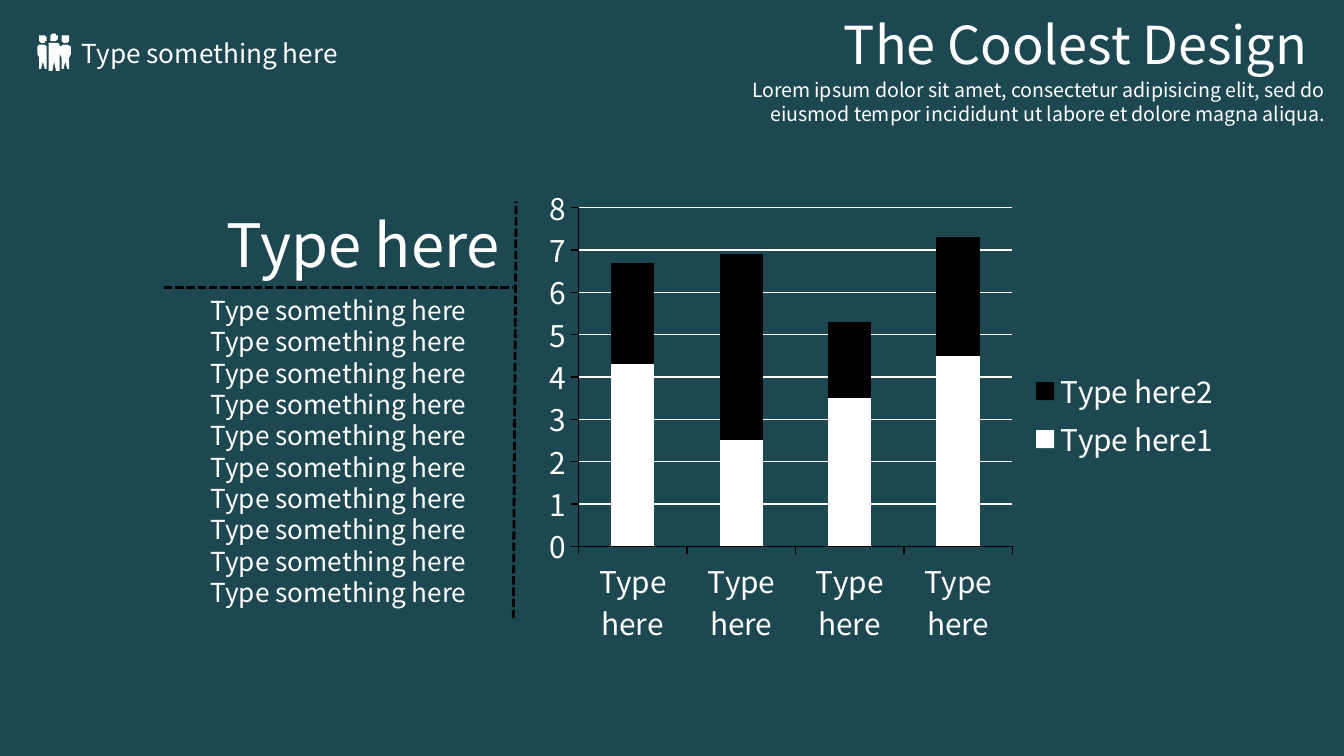
import math

from lxml import etree
from pptx import Presentation
from pptx.chart.data import CategoryChartData
from pptx.dml.color import RGBColor
from pptx.enum import chart as ch, dml, shapes, text
from pptx.oxml.ns import qn
from pptx.util import Pt

FONT = "Noto Sans CJK SC"
WHITE, BLACK, TEAL = "FFFFFF", "000000", "1D4751"
LEFT, RIGHT = text.PP_ALIGN.LEFT, text.PP_ALIGN.RIGHT

# words, (left, top, width, height), size, alignment, wraps
HEADING = ("The Coolest Design", (445, 2.9, 289.4, 41), 28, LEFT, True)
TEXTS = [
    ("Lorem ipsum dolor sit amet, consectetur adipisicing elit, sed do "
     "eiusmod tempor incididunt ut labore et dolore magna aliqua.",
     (354.2, 38.2, 362.9, 32.4), 10.5, RIGHT, True),
    ("Type something here", (36.7, 16.6, 154.8, 24.5), 14, LEFT, False),
    ("Type here", (87.8, 108, 187.2, 46.1), 32, RIGHT, True),
    (" ".join(["Type something here"] * 10),
     (105.8, 154.1, 170.6, 177.1), 14, LEFT, True),
]
DIVIDERS = [(275, 331.2, 276.5, 108), (87.8, 154.1, 275, 154.1)]

CHART_BOX = (286.6, 95, 374.4, 254.9)
CATEGORIES = ["Type here"] * 4
SERIES = [("Type here1", (4.3, 2.5, 3.5, 4.5), WHITE),
          ("Type here2", (2.4, 4.4, 1.8, 2.8), BLACK)]

# centre x, head y, shoulder top, foot y, half width
PEOPLE = [(22.8, 20.9, 23.8, 36.7, 2.5),
          (28.9, 20.2, 23, 38.2, 3.4),
          (35, 20.9, 23.8, 36.7, 2.5)]
HEAD_RADIUS = 2.2


def rgb(hex_code):
    return RGBColor.from_string(hex_code)


def pts(values):
    return [Pt(v) for v in values]


def style_font(font, size):
    for name, value in {"name": FONT, "size": Pt(size)}.items():
        setattr(font, name, value)
    font.color.rgb = rgb(WHITE)


def add_text(slide, words, box, size, align, wraps):
    frame = slide.shapes.add_textbox(*pts(box)).text_frame
    frame.word_wrap = wraps
    frame.auto_size = text.MSO_AUTO_SIZE.SHAPE_TO_FIT_TEXT
    line = frame.paragraphs[0]
    line.alignment = align
    line.line_spacing = Pt(size * 1.2)
    run = line.add_run()
    run.text = words
    style_font(run.font, size)
    return run


def add_glyph_shadow(run):
    """Put a soft dark shadow behind the letters of a run."""
    effects = etree.Element(qn("a:effectLst"))
    shadow = etree.SubElement(effects, qn("a:outerShdw"), blurRad="38100",
                              dist="38100", dir="2700000", algn="tl")
    colour = etree.SubElement(shadow, qn("a:srgbClr"), val=BLACK)
    etree.SubElement(colour, qn("a:alpha"), val="43000")
    run.font.fill._xPr.find(qn("a:solidFill")).addnext(effects)


def add_divider(slide, ends):
    divider = slide.shapes.add_connector(shapes.MSO_CONNECTOR.STRAIGHT, *pts(ends))
    divider.line.color.rgb = rgb(BLACK)
    divider.line.width = Pt(1.5)
    divider.line.dash_style = dml.MSO_LINE.SQUARE_DOT
    etree.SubElement(divider.line._get_or_add_ln().getparent(), qn("a:effectLst"))


def person_outlines(x, head_y, top, foot, half):
    """Return the head and the body of one person as lists of points."""
    turns = [math.tau * i / 24 for i in range(24)]
    head = [(x + HEAD_RADIUS * math.cos(t), head_y + HEAD_RADIUS * math.sin(t))
            for t in turns]
    side = [(half - 1, top), (half, top + 1.4), (half, 28.8),
            (half - 0.6, 31), (half - 0.6, foot), (0.7, foot)]
    body = ([(x + dx, y) for dx, y in side] + [(x, 33.1)]
            + [(x - dx, y) for dx, y in reversed(side)])
    return [head, body]


def add_people(slide):
    outlines = [o for person in PEOPLE for o in person_outlines(*person)]
    builder = slide.shapes.build_freeform(*outlines[0][0], scale=Pt(1))
    for number, outline in enumerate(outlines):
        if number:
            builder.move_to(*outline[0])
        builder.add_line_segments(outline[1:], close=True)
    people = builder.convert_to_shape()
    people.shadow.inherit = False
    people.fill.solid()
    people.fill.fore_color.rgb = rgb(WHITE)
    people.line.fill.background()


def add_stacked_chart(slide):
    data = CategoryChartData()
    data.categories = CATEGORIES
    for name, values, _ in SERIES:
        data.add_series(name, values)
    chart = slide.shapes.add_chart(ch.XL_CHART_TYPE.COLUMN_STACKED,
                                   *pts(CHART_BOX), data).chart
    style_font(chart.font, 16)
    chart.has_title = False
    chart.has_legend = True
    chart.legend.position = ch.XL_LEGEND_POSITION.RIGHT
    chart.legend.include_in_layout = False
    style_font(chart.legend.font, 16)

    value_axis = chart.value_axis
    value_axis.has_major_gridlines = True
    axis_lines = [(value_axis.major_gridlines.format.line, WHITE)]
    for axis in (chart.category_axis, value_axis):
        axis.major_tick_mark = ch.XL_TICK_MARK.OUTSIDE
        style_font(axis.tick_labels.font, 16)
        axis_lines.append((axis.format.line, BLACK))
    for line, colour in axis_lines:
        line.color.rgb = rgb(colour)
        line.width = Pt(0.75)

    plot = chart.plots[0]
    for name, value in {"gap_width": 150, "overlap": 100,
                        "vary_by_categories": False}.items():
        setattr(plot, name, value)
    for series, (_, _, colour) in zip(plot.series, SERIES):
        series.format.fill.solid()
        series.format.fill.fore_color.rgb = rgb(colour)


def main():
    deck = Presentation()
    deck.slide_width, deck.slide_height = Pt(720), Pt(405)
    slide = deck.slides.add_slide(deck.slide_layouts[6])
    slide.background.fill.solid()
    slide.background.fill.fore_color.rgb = rgb(TEAL)

    add_glyph_shadow(add_text(slide, *HEADING))
    add_people(slide)
    add_stacked_chart(slide)
    for ends in DIVIDERS:
        add_divider(slide, ends)
    for entry in TEXTS:
        add_text(slide, *entry)
    deck.save("out.pptx")


if __name__ == "__main__":
    main()
